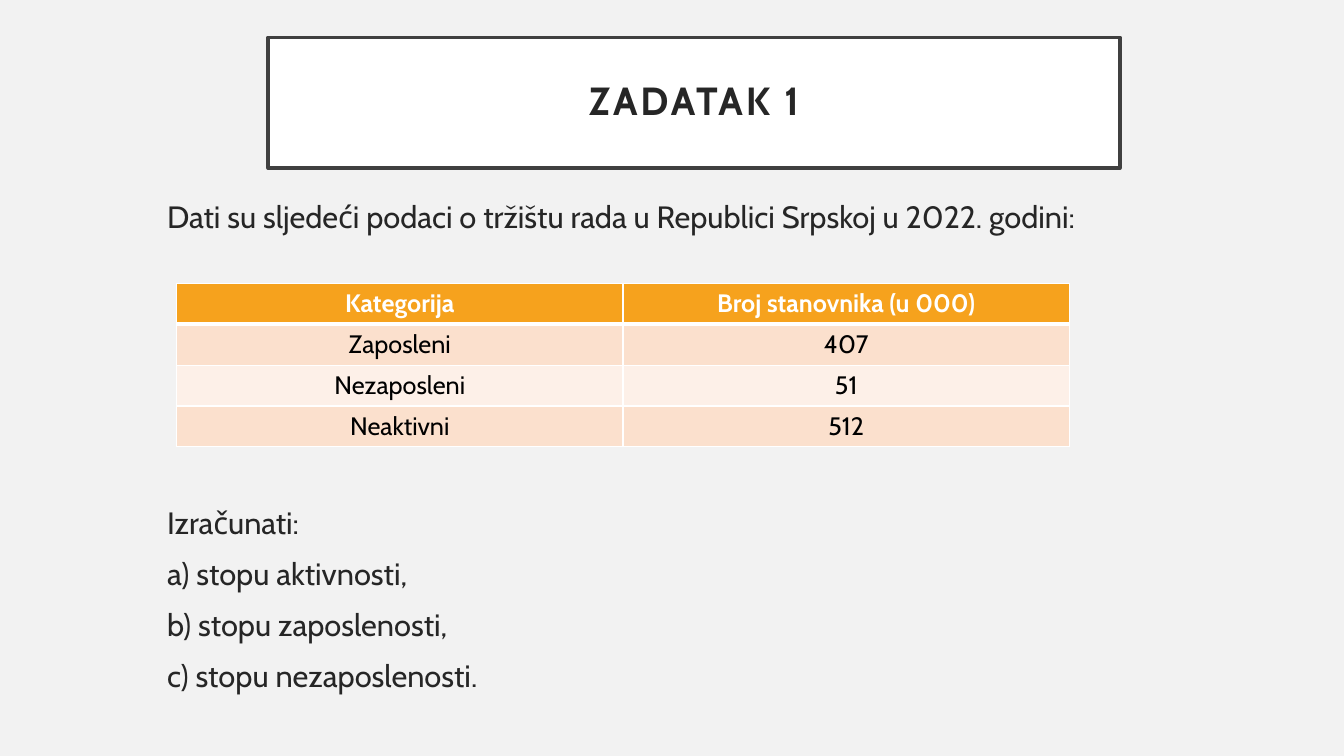
from dataclasses import dataclass

from lxml.etree import SubElement as Sub
from pptx import Presentation
from pptx.dml.color import RGBColor as Rgb
from pptx.enum.text import MSO_ANCHOR as Anchor, PP_ALIGN as Align
from pptx.oxml.ns import qn
from pptx.util import Cm, Pt

# Content
TITLE = "ZADATAK 1"
INTRO = ["Dati su sljedeći podaci o tržištu rada u Republici Srpskoj u 2022. godini:"]
TASKS = [
    "Izračunati:",
    "a) stopu aktivnosti,",
    "b) stopu zaposlenosti,",
    "c) stopu nezaposlenosti.",
]
ROWS = [
    ("Kategorija", "Broj stanovnika (u 000)"),
    ("Zaposleni", "407"),
    ("Nezaposleni", "51"),
    ("Neaktivni", "512"),
]


@dataclass(frozen=True)
class Theme:
    font: str = "Cabin"
    back: str = "F2F2F2"
    white: str = "FFFFFF"
    black: str = "000000"
    text: str = "262626"
    frame: str = "404040"
    head: str = "F6A21D"
    bands: tuple = ("FDF0E8", "FBE0CD")
    title: int = 28
    body: int = 22
    cell: int = 18


T = Theme()


def paint(fill, color):
    fill.solid()
    fill.fore_color.rgb = Rgb.from_string(color)


def style(para, size, color, bold=False):
    for run in para.runs:
        font = run.font
        font.name, font.size, font.bold = T.font, Pt(size), bold
        font.color.rgb = Rgb.from_string(color)


def add_text(slide, lines, top, height):
    box = slide.shapes.add_textbox(Cm(3.96), Cm(top), Cm(25.78), Cm(height))
    frame = box.text_frame
    frame.word_wrap = True
    frame.text = "\n".join(lines)
    for i, para in enumerate(frame.paragraphs):
        para.space_before = Pt(10 if i else 0)
        style(para, T.body, T.text)


def add_edge(cell, side, width):
    line = Sub(cell._tc.get_or_add_tcPr(), qn(f"a:ln{side}"), w=str(Pt(width)))
    Sub(Sub(line, qn("a:solidFill")), qn("a:srgbClr"), val=T.white)


def add_title(slide):
    title = slide.shapes.title
    title.left, title.top = Cm(6.76), Cm(0.94)
    title.width, title.height = Cm(21.46), Cm(3.3)
    paint(title.fill, T.white)
    paint(title.line.fill, T.frame)
    title.line.width = Pt(2.5)
    frame = title.text_frame
    frame.text = TITLE
    frame.word_wrap = True
    frame.vertical_anchor = Anchor.MIDDLE
    frame.margin_left = frame.margin_right = Cm(0.51)
    frame.margin_top = frame.margin_bottom = Cm(0.51)
    para = frame.paragraphs[0]
    para.alignment, para.line_spacing = Align.CENTER, 0.9
    style(para, T.title, T.text, True)
    para.runs[0].font._element.set("spc", "200")


def add_data(slide):
    high = 1.03
    table = slide.shapes.add_table(
        len(ROWS), len(ROWS[0]), Cm(4.45), Cm(7.14), Cm(22.5), Cm(high * len(ROWS))
    ).table
    for r, row in enumerate(ROWS):
        head = r == 0
        for c, text in enumerate(row):
            cell = table.cell(r, c)
            for side in "LRTB":
                thick = (head and side == "B") or (r == 1 and side == "T")
                add_edge(cell, side, 3 if thick else 1)
            paint(cell.fill, T.head if head else T.bands[r % 2])
            cell.text_frame.text = text
            para = cell.text_frame.paragraphs[0]
            para.alignment = Align.CENTER
            style(para, T.cell, T.white if head else T.black, head)


def main():
    deck = Presentation()
    deck.slide_width, deck.slide_height = Cm(33.87), Cm(19.05)
    slide = deck.slides.add_slide(deck.slide_layouts[5])
    paint(slide.background.fill, T.back)

    # Title frame
    add_title(slide)
    # Text above and below the table
    add_text(slide, INTRO, 4.85, 1.3)
    add_text(slide, TASKS, 12.56, 5.5)
    # Labour market table
    add_data(slide)

    deck.save("out.pptx")


if __name__ == "__main__":
    main()
